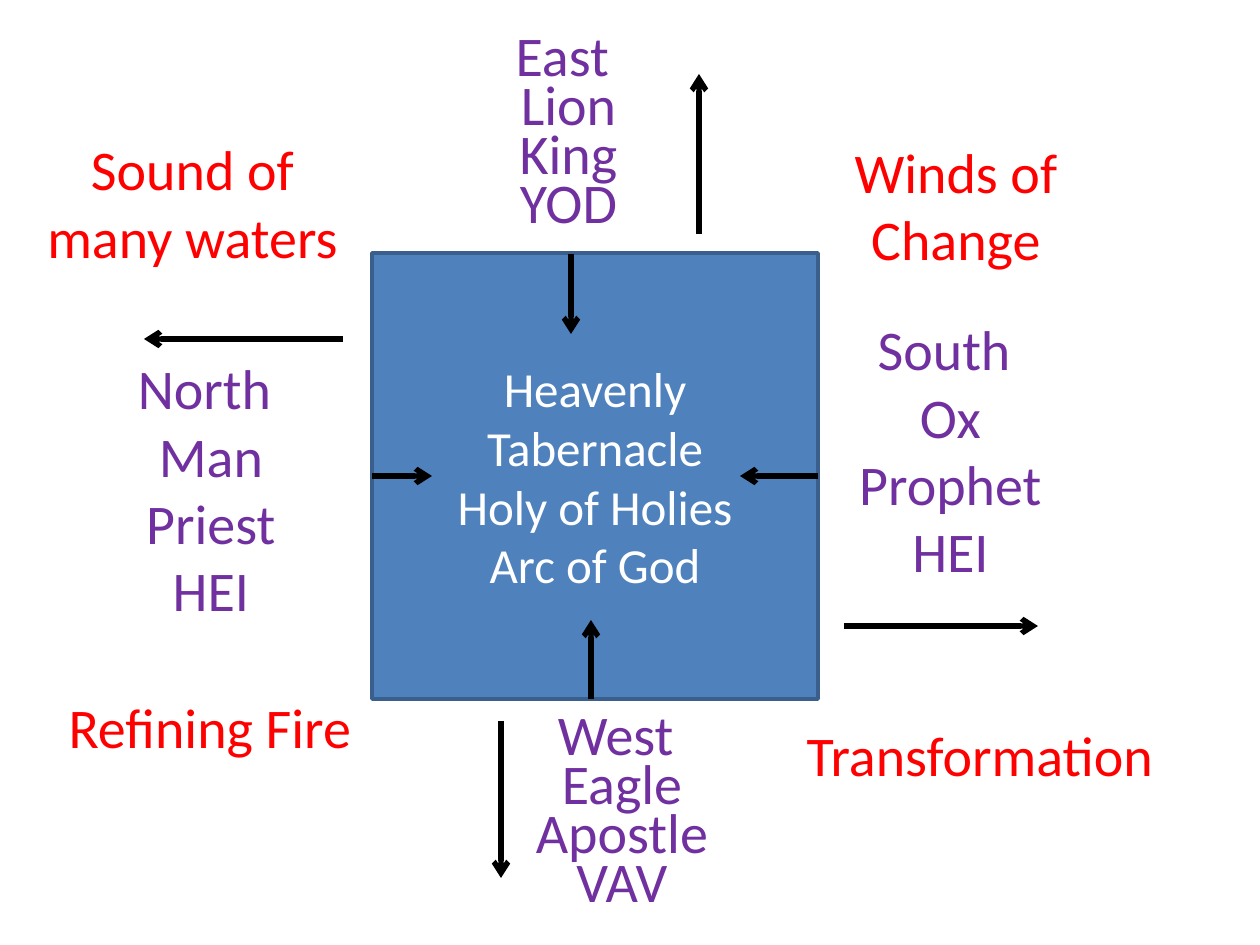
import dataclasses
import typing

import pptx
import pptx.dml.color
import pptx.enum.shapes
import pptx.enum.text
import pptx.oxml.ns
import pptx.util
from lxml import etree

EMU_PER_PX = 914400 / 126
LEFT_SIDE, RIGHT_SIDE = 1, 3


@dataclasses.dataclass(frozen=True)
class Theme:
    font: str = "Calibri"
    square: str = "4F81BD"
    outline: str = "3A5F8C"
    center_text: str = "FFFFFF"
    direction: str = "7030A0"
    sign: str = "FF0000"
    arrow: str = "000000"
    label_size: int = 32
    center_size: int = 28
    tight_spacing: int = 28
    outline_width: int = 2
    arrow_width: int = 3


@dataclasses.dataclass(frozen=True)
class Label:
    left: int
    top: int
    width: int
    height: int
    lines: tuple[str, ...]
    color: str
    spacing: typing.Optional[int] = None


@dataclasses.dataclass(frozen=True)
class Arrow:
    start_x: int
    start_y: int
    end_x: int
    end_y: int
    side: typing.Optional[int] = None


THEME = Theme()
SQUARE = (372, 253, 446, 446)

LABELS = (
    Label(97, 354, 228, 267, ("North ", "Man", "Priest", "HEI"), THEME.direction),
    Label(849, 315, 203, 276, ("South ", "Ox", "Prophet", "HEI"), THEME.direction),
    Label(491, 39, 155, 197, ("East ", "Lion", "King", "YOD"), THEME.direction, THEME.tight_spacing),
    Label(525, 718, 194, 190, ("West ", "Eagle", "Apostle", "VAV"), THEME.direction, THEME.tight_spacing),
    Label(803, 721, 354, 59, ("Transformation",), THEME.sign),
    Label(64, 693, 292, 87, ("Refining Fire",), THEME.sign),
    Label(830, 137, 252, 145, ("Winds of Change",), THEME.sign),
    Label(44, 135, 297, 199, ("Sound of many waters",), THEME.sign),
)

ARROWS = (
    Arrow(699, 234, 699, 74),
    Arrow(501, 721, 501, 878),
    Arrow(844, 626, 1038, 626),
    Arrow(343, 339, 144, 339),
    Arrow(571, 254, 571, 334),
    Arrow(372, 476, 432, 476, LEFT_SIDE),
    Arrow(818, 476, 740, 476, RIGHT_SIDE),
    Arrow(591, 699, 591, 620),
)


def px(length: int) -> pptx.util.Emu:
    return pptx.util.Emu(round(length * EMU_PER_PX))


def rgb(color: str) -> pptx.dml.color.RGBColor:
    return pptx.dml.color.RGBColor.from_string(color)


def apply(target: typing.Any, values: dict[str, typing.Any]) -> None:
    for name, value in values.items():
        setattr(target, name, value)


def write_lines(frame, lines: tuple[str, ...], size: int, color: str,
                spacing: typing.Optional[int] = None) -> None:
    for index, line in enumerate(lines):
        para = frame.paragraphs[0] if index == 0 else frame.add_paragraph()
        para.text = line
        para.alignment = pptx.enum.text.PP_ALIGN.CENTER
        if spacing:
            para.line_spacing = pptx.util.Pt(spacing)
        for span in para.runs:
            apply(span.font, {"name": THEME.font, "size": pptx.util.Pt(size)})
            span.font.color.rgb = rgb(color)


def draw_square(page):
    square = page.shapes.add_shape(
        pptx.enum.shapes.MSO_SHAPE.RECTANGLE, *map(px, SQUARE))
    square.shadow.inherit = False
    square.fill.solid()
    square.fill.fore_color.rgb = rgb(THEME.square)
    square.line.color.rgb = rgb(THEME.outline)
    square.line.width = pptx.util.Pt(THEME.outline_width)
    apply(square.text_frame, {
        "word_wrap": True,
        "vertical_anchor": pptx.enum.text.MSO_ANCHOR.MIDDLE,
    })
    lines = ("Heavenly\vTabernacle", "Holy of Holies", "Arc of God")
    write_lines(square.text_frame, lines, THEME.center_size, THEME.center_text)
    return square


def draw_label(page, label: Label) -> None:
    box = page.shapes.add_textbox(
        px(label.left), px(label.top), px(label.width), px(label.height))
    apply(box.text_frame, {
        "word_wrap": True,
        "margin_left": 0,
        "margin_top": 0,
        "margin_right": 0,
        "margin_bottom": 0,
    })
    write_lines(box.text_frame, label.lines, THEME.label_size, label.color, label.spacing)


def draw_arrow(page, arrow: Arrow, square) -> None:
    line = page.shapes.add_connector(
        pptx.enum.shapes.MSO_CONNECTOR.STRAIGHT,
        px(arrow.start_x), px(arrow.start_y), px(arrow.end_x), px(arrow.end_y))
    if arrow.side is not None:
        line.begin_connect(square, arrow.side)
    line.line.color.rgb = rgb(THEME.arrow)
    line.line.width = pptx.util.Pt(THEME.arrow_width)
    properties = line._element.spPr
    outline = properties.find(pptx.oxml.ns.qn("a:ln"))
    etree.SubElement(outline, pptx.oxml.ns.qn("a:tailEnd"), type="arrow")
    etree.SubElement(properties, pptx.oxml.ns.qn("a:effectLst"))


def main() -> None:
    deck = pptx.Presentation()
    apply(deck, {"slide_width": px(1260), "slide_height": px(945)})
    page = deck.slides.add_slide(deck.slide_layouts.get_by_name("Blank"))
    square = draw_square(page)
    for label in LABELS:
        draw_label(page, label)
    for arrow in ARROWS:
        draw_arrow(page, arrow, square)
    deck.save("out.pptx")


if __name__ == "__main__":
    main()
